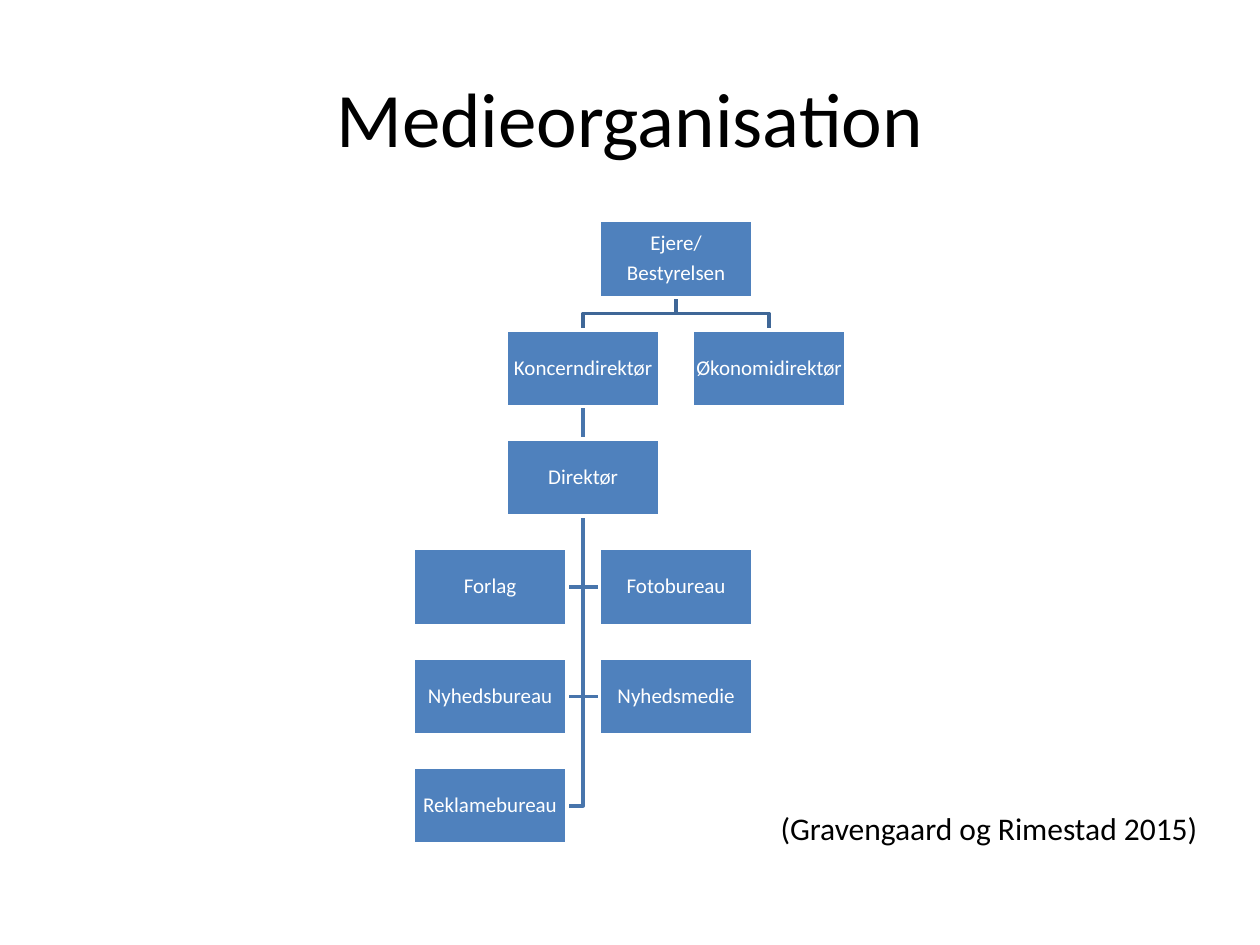
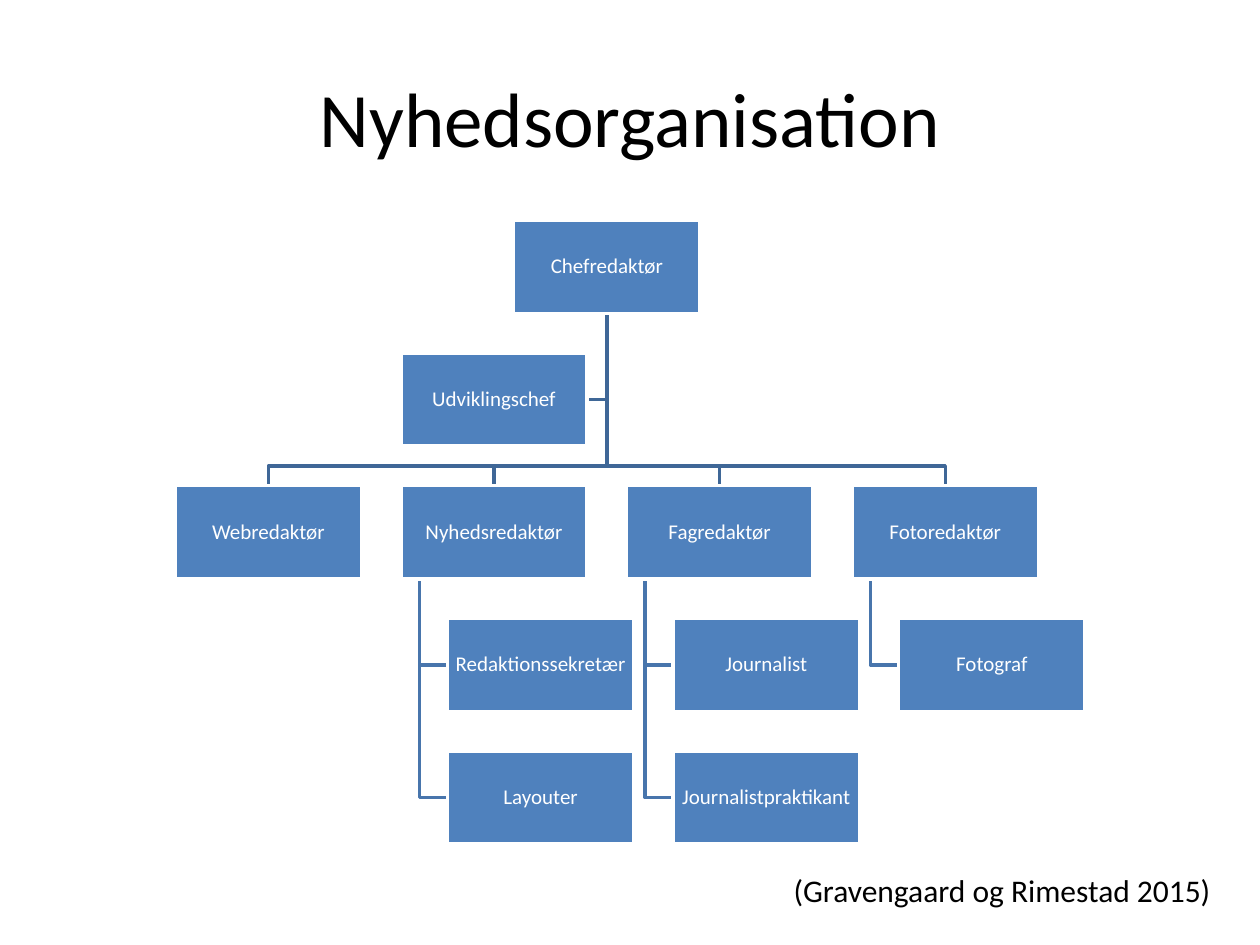
from dataclasses import dataclass

from lxml.etree import SubElement
from pptx import Presentation
from pptx.dml.color import RGBColor as RGB
from pptx.enum.shapes import MSO_CONNECTOR as LineKind, MSO_SHAPE as Preset
from pptx.enum.text import MSO_ANCHOR as Anchor, PP_ALIGN as Align
from pptx.oxml.ns import qn
from pptx.util import Inches, Pt

TITLE_ONLY = 5
COLUMN_STEP = 1.21          # column pitch, in box widths
INDENT = 0.25 / COLUMN_STEP  # shift of hanging boxes, in columns


@dataclass(frozen=True)
class Theme:
    font: str = "Calibri"
    ink: RGB = RGB(0x00, 0x00, 0x00)
    paper: RGB = RGB(0xFF, 0xFF, 0xFF)
    box: RGB = RGB(0x4F, 0x81, 0xBD)
    top_link: RGB = RGB(0x3F, 0x67, 0x97)
    lower_link: RGB = RGB(0x48, 0x75, 0xAC)
    title_size: int = 44
    source_size: int = 18
    box_size: int = 12
    stroke: int = 2


@dataclass(frozen=True)
class Post:
    """A box of the chart: its cell, its superior and how the link runs."""
    name: str
    column: float
    row: int
    superior: str = ""
    route: str = "down"  # down, side (stem at centre) or hang (stem at left)


@dataclass(frozen=True)
class Grid:
    """Chart grid in shares of the slide; rows fill the given height."""
    left: float
    box_width: float
    rows: int
    top: float = 1.75 / 7.5
    bottom: float = 6.7 / 7.5


def apply(target, values):
    for attribute, value in values.items():
        setattr(target, attribute, value)


class OrgDeck:
    def __init__(self, theme):
        self.theme = theme
        self.deck = Presentation()
        apply(self.deck, {"slide_width": Inches(10), "slide_height": Inches(7.5)})
        self.slide = None

    def area(self, left, top, width, height):
        """Turn shares of the slide into lengths."""
        across, down = self.deck.slide_width, self.deck.slide_height
        return [round(share * side) for share, side in
                zip((left, top, width, height), (across, down, across, down))]

    def label(self, frame, text, size, color, align, paragraph_format=None):
        frame.text = text
        frame.word_wrap = True
        for paragraph in frame.paragraphs:
            apply(paragraph, {"alignment": align, **(paragraph_format or {})})
            apply(paragraph.font, {"name": self.theme.font, "size": Pt(size)})
            paragraph.font.color.rgb = color

    def stroke(self, line, color):
        line.color.rgb = color
        line.width = Pt(self.theme.stroke)

    def title(self, text):
        self.slide = self.deck.slides.add_slide(self.deck.slide_layouts[TITLE_ONLY])
        heading = self.slide.shapes.title
        places = self.area(0.05, 0.04, 0.9, 1 / 6)
        apply(heading, dict(zip(("left", "top", "width", "height"), places)))
        heading.text_frame.vertical_anchor = Anchor.MIDDLE
        self.label(heading.text_frame, text, self.theme.title_size,
                   self.theme.ink, Align.CENTER)

    def source(self, text, left, top, width, align):
        citation = self.slide.shapes.add_textbox(*self.area(left, top, width, 0.4 / 7.5))
        self.label(citation.text_frame, text, self.theme.source_size,
                   self.theme.ink, align)

    def box(self, text, cell):
        box = self.slide.shapes.add_shape(Preset.RECTANGLE, *cell)
        box.shadow.inherit = False
        box.fill.solid()
        box.fill.fore_color.rgb = self.theme.box
        self.stroke(box.line, self.theme.paper)
        margins = ("margin_left", "margin_top", "margin_right", "margin_bottom")
        apply(box.text_frame, dict.fromkeys(margins, Inches(0.01)))
        box.text_frame.vertical_anchor = Anchor.MIDDLE
        self.label(box.text_frame, text, self.theme.box_size, self.theme.paper,
                   Align.CENTER, {"line_spacing": 0.9})
        for paragraph in box.text_frame.paragraphs[:-1]:
            paragraph.space_after = Pt(0.35 * self.theme.box_size)

    def link(self, points, color):
        """Draw a straight or a bent line through the points."""
        start, *rest = points
        if len(rest) == 1:
            link = self.slide.shapes.add_connector(LineKind.STRAIGHT, *start, *rest[0])
            SubElement(link._element.spPr, qn("a:effectLst"))
        else:
            outline = self.slide.shapes.build_freeform(*start)
            outline.add_line_segments(rest, close=False)
            link = outline.convert_to_shape()
            link.shadow.inherit = False
            link.fill.background()
        self.stroke(link.line, color)

    def route(self, superior, cell, kind, gap):
        """Find the corners of the link from a superior's cell to a cell."""
        upper_left, upper_top, width, height = superior
        left, top = cell[:2]
        stem = upper_left + width // (10 if kind == "hang" else 2)
        start = (stem, upper_top + height)
        if kind != "down":
            middle = top + height // 2
            edge = left if left > stem else left + width
            return [start, (stem, middle), (edge, middle)]
        center = left + width // 2
        if center == stem:
            return [start, (center, top)]
        bus = top - gap // 2
        return [start, (stem, bus), (center, bus), (center, top)]

    def chart(self, grid, posts):
        # Boxes are twice as wide as high
        left, top, width, span = self.area(
            grid.left, grid.top, grid.box_width, grid.bottom - grid.top)
        height = width // 2
        row_step = (span - height) // (grid.rows - 1)
        cells = {post.name: (left + round(post.column * COLUMN_STEP * width),
                             top + post.row * row_step, width, height)
                 for post in posts}
        # Links lie behind the boxes
        root = posts[0].name
        for post in posts[1:]:
            points = self.route(cells[post.superior], cells[post.name],
                                post.route, row_step - height)
            self.link(points, self.theme.top_link if post.superior == root
                      else self.theme.lower_link)
        for name, cell in cells.items():
            self.box(name, cell)


CITATION = "(Gravengaard og Rimestad 2015)"

OWNERS = "Ejere/\nBestyrelsen"
MEDIA_POSTS = [
    Post(OWNERS, 1, 0),
    Post("Koncerndirektør", 0.5, 1, OWNERS),
    Post("Økonomidirektør", 1.5, 1, OWNERS),
    Post("Direktør", 0.5, 2, "Koncerndirektør"),
    *(Post(name, index % 2, 3 + index // 2, "Direktør", "side")
      for index, name in enumerate(["Forlag", "Fotobureau", "Nyhedsbureau",
                                    "Nyhedsmedie", "Reklamebureau"])),
]

EDITORS = {
    "Webredaktør": [],
    "Nyhedsredaktør": ["Redaktionssekretær", "Layouter"],
    "Fagredaktør": ["Journalist", "Journalistpraktikant"],
    "Fotoredaktør": ["Fotograf"],
}
CHIEF = "Chefredaktør"
NEWS_POSTS = [
    Post(CHIEF, 1.5, 0),
    Post("Udviklingschef", 1, 1, CHIEF, "side"),
    *(Post(editor, column, 2, CHIEF) for column, editor in enumerate(EDITORS)),
    *(Post(name, column + INDENT, row, editor, "hang")
      for column, (editor, staff) in enumerate(EDITORS.items())
      for row, name in enumerate(staff, start=3)),
]


def main():
    org = OrgDeck(Theme())

    # Media organisation
    org.title("Medieorganisation")
    org.chart(Grid(left=0.328, box_width=0.122, rows=6), MEDIA_POSTS)
    org.source(CITATION, 0.606, 0.85, 0.358, Align.CENTER)

    # News organisation
    org.title("Nyhedsorganisation")
    org.chart(Grid(left=0.139, box_width=0.148, rows=5), NEWS_POSTS)
    org.source(CITATION, 0.62, 0.915, 0.375, Align.LEFT)

    org.deck.save("out.pptx")


if __name__ == "__main__":
    main()
